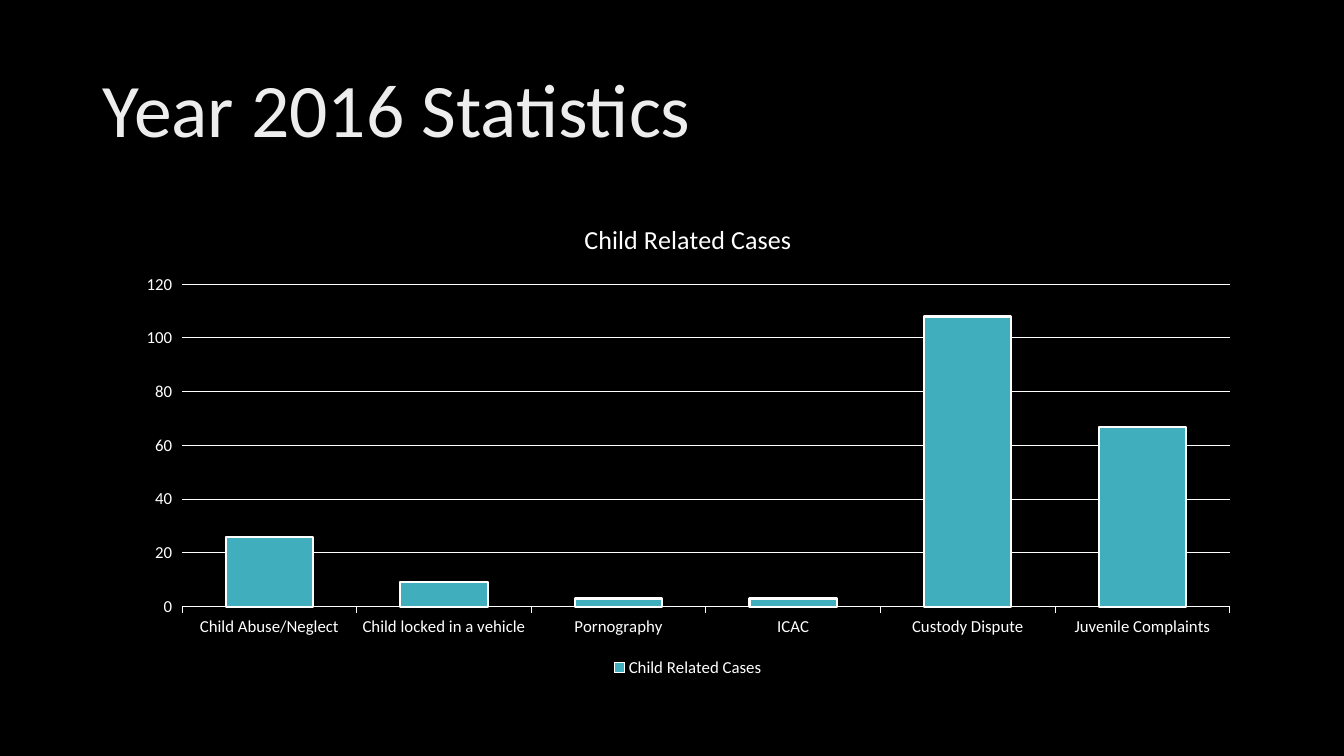
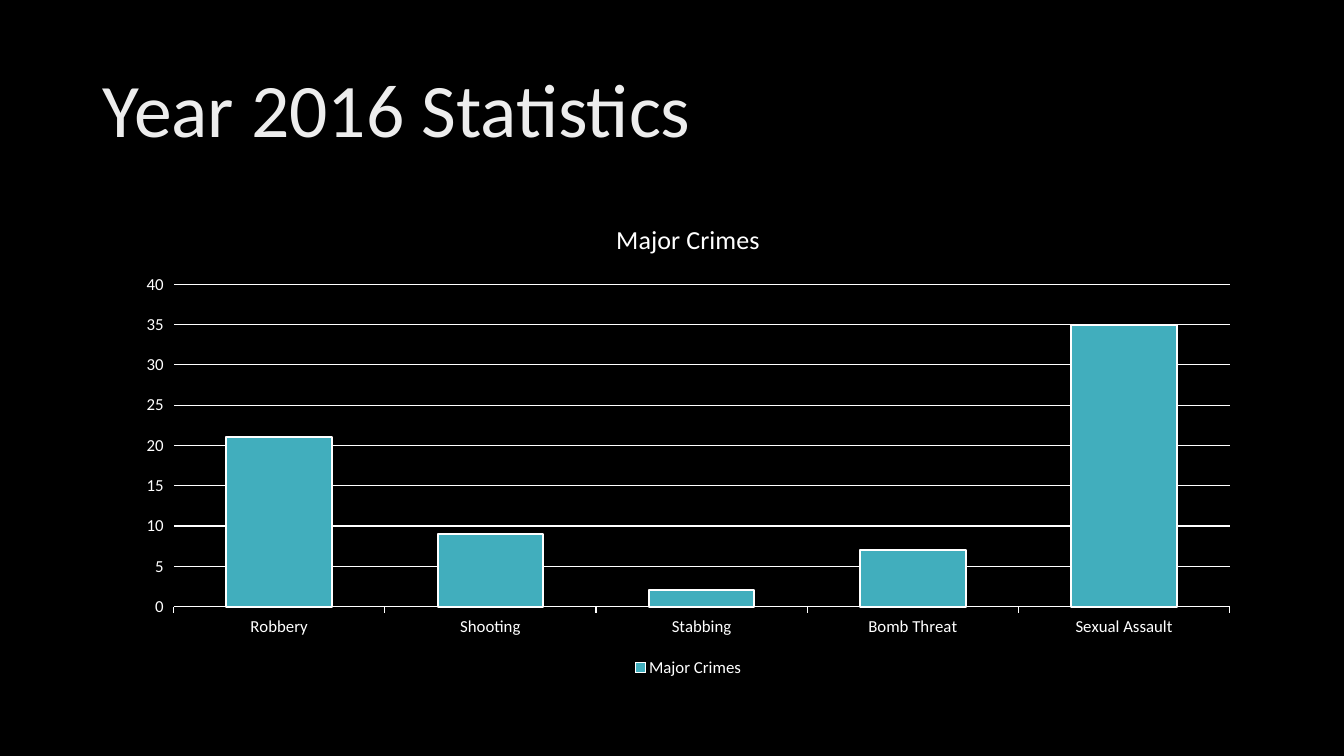
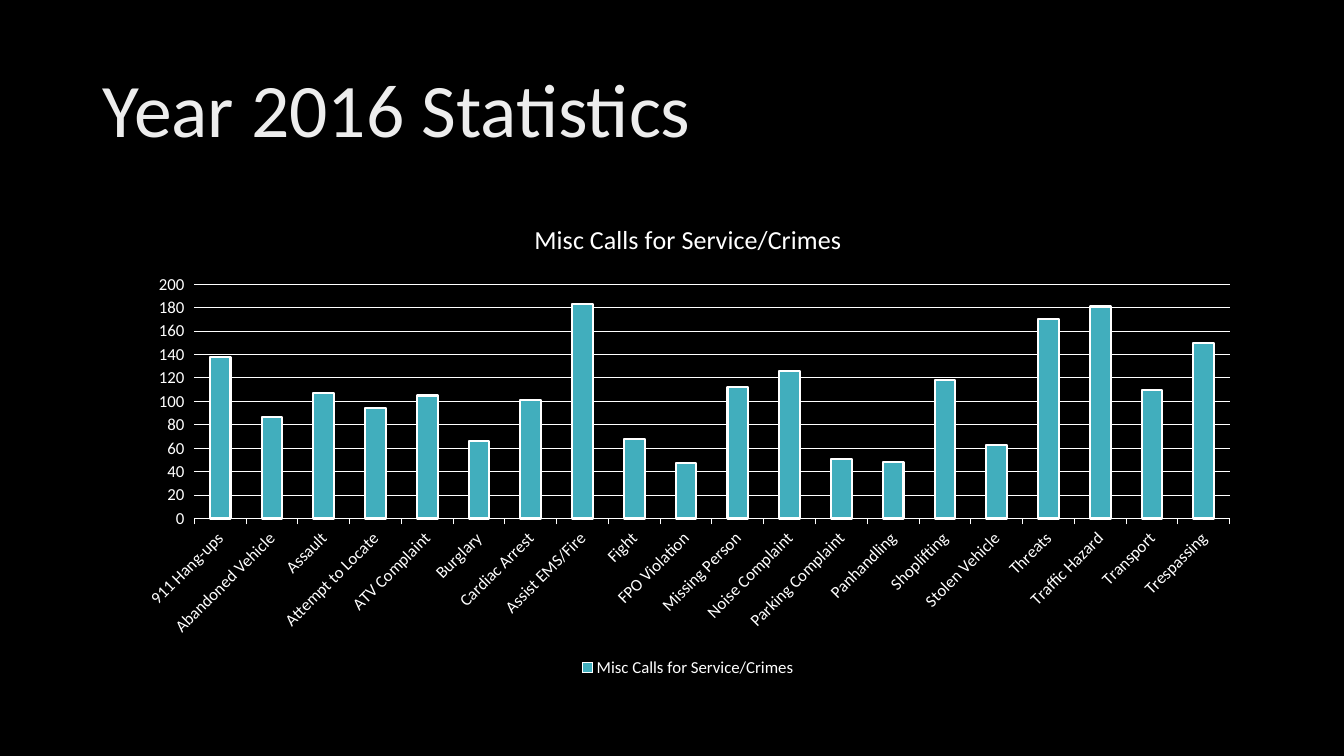
from pptx import Presentation
from pptx.chart.data import CategoryChartData
from pptx.dml.color import RGBColor
from pptx.enum.chart import XL_CHART_TYPE, XL_LEGEND_POSITION, XL_TICK_MARK
from pptx.enum.text import MSO_ANCHOR
from pptx.util import Inches, Pt

COLUMNS = XL_CHART_TYPE.COLUMN_CLUSTERED
BOTTOM = XL_LEGEND_POSITION.BOTTOM
TICK_OUT = XL_TICK_MARK.OUTSIDE
MIDDLE = MSO_ANCHOR.MIDDLE

COLORS = {
    "background": "000000",
    "heading": "EDEDED",
    "text": "FFFFFF",
    "bar": "41AEBD",
}
FONT = "Calibri"
HEADING = "Year 2016 Statistics"

STATISTICS = [
    {
        "name": "Child Related Cases",
        "gap": 100,
        "counts": {
            "Child Abuse/Neglect": 26,
            "Child locked in a vehicle": 9,
            "Pornography": 3,
            "ICAC": 3,
            "Custody Dispute": 108,
            "Juvenile Complaints": 67,
        },
    },
    {
        "name": "Major Crimes",
        "gap": 100,
        "counts": {
            "Robbery": 21,
            "Shooting": 9,
            "Stabbing": 2,
            "Bomb Threat": 7,
            "Sexual Assault": 35,
        },
    },
    {
        "name": "Misc Calls for Service/Crimes",
        "gap": 150,
        "label_angle": -45,
        "counts": {
            "911 Hang-ups": 138,
            "Abandoned Vehicle": 87,
            "Assault": 107,
            "Attempt to Locate": 94,
            "ATV Complaint": 105,
            "Burglary": 66,
            "Cardiac Arrest": 101,
            "Assist EMS/Fire": 183,
            "Fight": 68,
            "FPO Violation": 47,
            "Missing Person": 112,
            "Noise Complaint": 126,
            "Parking Complaint": 51,
            "Panhandling": 48,
            "Shoplifting": 118,
            "Stolen Vehicle": 63,
            "Threats": 170,
            "Traffic Hazard": 181,
            "Transport": 110,
            "Trespassing": 150,
        },
    },
]


def color(name):
    return RGBColor.from_string(COLORS[name])


def style_font(font, size, color_name="text"):
    font.name = FONT
    font.size = Pt(size)
    font.bold = False
    font.color.rgb = color(color_name)


def style_line(line, width):
    line.color.rgb = color("text")
    line.width = Pt(width)


def write_text(frame, text, size, color_name="text", line_spacing=None):
    paragraph = frame.paragraphs[0]
    paragraph.line_spacing = line_spacing
    run = paragraph.add_run()
    run.text = text
    style_font(run.font, size, color_name)


def add_heading(slide):
    heading = slide.shapes.add_textbox(
        Inches(0.92), Inches(0.4), Inches(11.5), Inches(1.45))
    frame = heading.text_frame
    frame.word_wrap = True
    frame.vertical_anchor = MIDDLE
    write_text(frame, HEADING, size=54, color_name="heading", line_spacing=0.9)


def style_axes(chart, label_angle):
    categories, values = chart.category_axis, chart.value_axis
    for axis in (categories, values):
        axis.major_tick_mark = TICK_OUT
        style_font(axis.tick_labels.font, 12)
    style_line(categories.format.line, 0.75)
    values.format.line.fill.background()
    style_line(values.major_gridlines.format.line, 0.75)
    if label_angle:
        label_body = categories._element.txPr.bodyPr
        label_body.set("rot", str(label_angle * 60000))
        label_body.set("vert", "horz")


def add_statistics_chart(slide, name, counts, gap, label_angle=None):
    data = CategoryChartData()
    data.categories = list(counts)
    data.add_series(name, list(counts.values()))
    chart = slide.shapes.add_chart(
        COLUMNS, Inches(1.23), Inches(2), Inches(11.19), Inches(4.76), data).chart
    style_font(chart.font, 10)
    write_text(chart.chart_title.text_frame, name, size=18.6)
    chart.chart_title.include_in_layout = False
    chart.has_legend = True
    chart.legend.position = BOTTOM
    chart.legend.include_in_layout = False
    style_font(chart.legend.font, 12)
    style_axes(chart, label_angle)

    plot = chart.plots[0]
    plot.gap_width = gap
    plot.vary_by_categories = False
    bars = plot.series[0].format
    bars.fill.solid()
    bars.fill.fore_color.rgb = color("bar")
    style_line(bars.line, 1.5)


def main():
    deck = Presentation()
    deck.slide_width = Inches(13.33)
    deck.slide_height = Inches(7.5)
    background = deck.slide_master.background.fill
    background.solid()
    background.fore_color.rgb = color("background")
    blank = deck.slide_layouts[6]
    for statistic in STATISTICS:
        slide = deck.slides.add_slide(blank)
        add_heading(slide)
        add_statistics_chart(slide, **statistic)
    deck.save("out.pptx")


if __name__ == "__main__":
    main()
